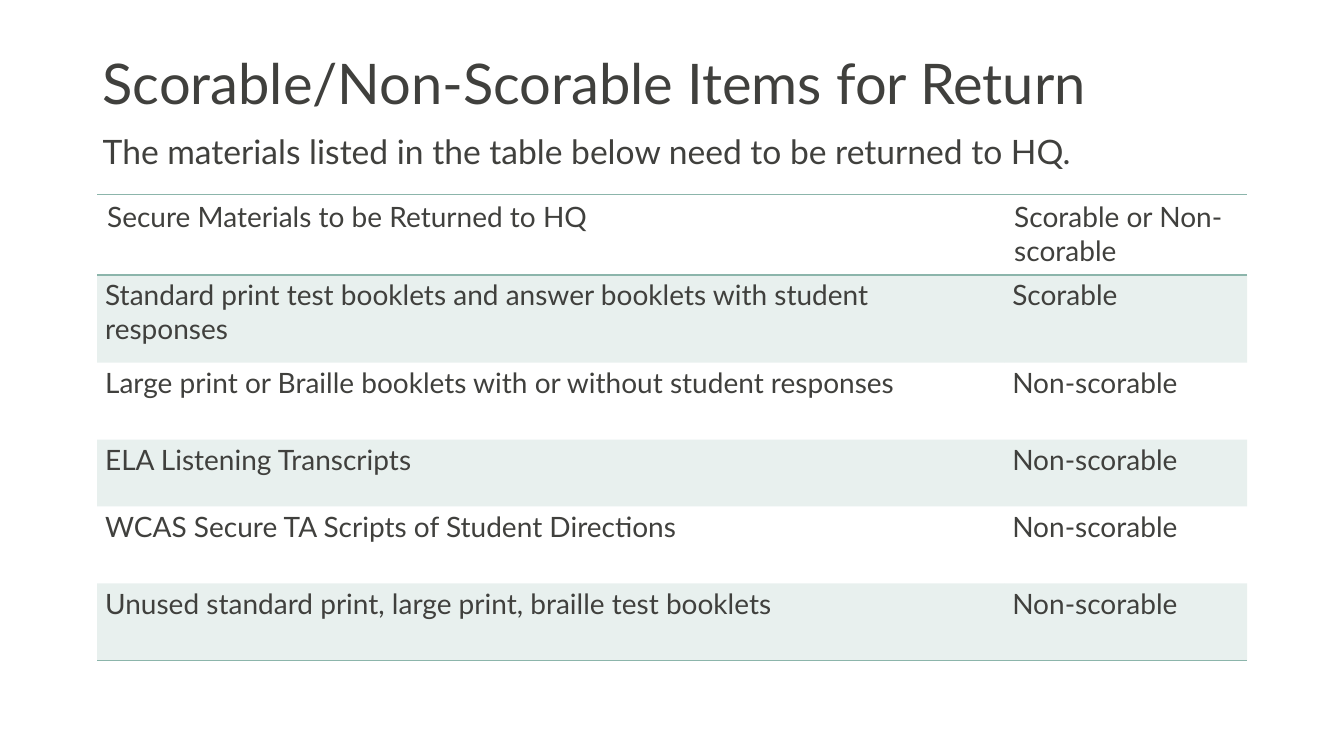
"""Builds the slide listing the materials to be returned."""
from lxml.etree import SubElement
from pptx import Presentation
from pptx.dml.color import RGBColor as RGB
from pptx.enum.text import MSO_ANCHOR as ANCHOR
from pptx.oxml.ns import qn
from pptx.util import Cm, Pt

COLORS = {"text": "40403D", "accent": "8CB5AB"}
ROWS = [
    ("Secure Materials to be Returned to HQ", "Scorable or Non-scorable"),
    ("Standard print test booklets and answer booklets with student responses", "Scorable"),
    ("Large print or Braille booklets with or without student responses", "Non-scorable"),
    ("ELA Listening Transcripts", "Non-scorable"),
    ("WCAS Secure TA Scripts of Student Directions", "Non-scorable"),
    ("Unused standard print, large print, braille test booklets", "Non-scorable"),
]


class Deck:
    font = "Lato"

    def __init__(self, prs):
        self.s = prs.slides.add_slide(prs.slide_layouts[6])

    def style(self, p, size):
        for r in p.runs:
            r.font.name = self.font
            r.font.size = Pt(size)
            r.font.color.rgb = RGB.from_string(COLORS["text"])

    def text(self, text, x, y, w, h, size, anchor=ANCHOR.TOP):
        tf = self.s.shapes.add_textbox(Cm(x), Cm(y), Cm(w), Cm(h)).text_frame
        tf.word_wrap = True
        tf.vertical_anchor = anchor
        p = tf.paragraphs[0]
        p.text = text
        p.line_spacing = 0.9
        self.style(p, size)

    def borders(self, cell, ruled):
        tc_pr = cell._tc.get_or_add_tcPr()
        for side in ("L", "R", "T", "B"):
            ln = SubElement(tc_pr, qn(f"a:ln{side}"), w=str(Pt(1)))
            if side in ruled:
                fill = SubElement(ln, qn("a:solidFill"))
                SubElement(fill, qn("a:srgbClr"), val=COLORS["accent"])
            else:
                SubElement(ln, qn("a:noFill"))

    def tint(self, cell, alpha):
        cell.fill.solid()
        cell.fill.fore_color.rgb = RGB.from_string(COLORS["accent"])
        color = cell._tc.tcPr.find(qn("a:solidFill")).find(qn("a:srgbClr"))
        SubElement(color, qn("a:alpha"), val=str(alpha * 1000))

    def table(self, rows, x, y, widths, heights, size):
        frame = self.s.shapes.add_table(len(rows), len(widths), Cm(x), Cm(y),
                                        Cm(sum(widths)), Cm(sum(heights)))
        table = frame.table
        table.first_row = table.horz_banding = False
        for col, w in zip(table.columns, widths):
            col.width = Cm(w)
        for i, (row, h) in enumerate(zip(rows, heights)):
            table.rows[i].height = Cm(h)
            ruled = {0: "TB", 1: "T", len(rows) - 1: "B"}.get(i, "")
            for j, text in enumerate(row):
                cell = table.cell(i, j)
                cell.text = text
                self.style(cell.text_frame.paragraphs[0], size)
                dx, dy = (0.2, 0.08) if i else (0.25, 0.13)
                cell.margin_left = cell.margin_right = Cm(dx)
                cell.margin_top = cell.margin_bottom = Cm(dy)
                self.borders(cell, ruled)
                if i % 2:
                    self.tint(cell, 20)
                else:
                    cell.fill.background()


def main():
    prs = Presentation()
    prs.slide_width, prs.slide_height = Cm(33.87), Cm(19.05)
    deck = Deck(prs)
    deck.text("Scorable/Non-Scorable Items for Return",
              2.34, 1.27, 28.47, 1.8, 40, ANCHOR.BOTTOM)
    deck.text("The materials listed in the table below need to be returned to HQ.",
              2.34, 3.28, 26.9, 0.86, 24)
    deck.table(ROWS, 2.45, 4.9, [22.86, 6.12],
               [2.03, 2.21, 1.94, 1.68, 1.94, 1.94], 20)
    prs.save("out.pptx")


if __name__ == "__main__":
    main()
